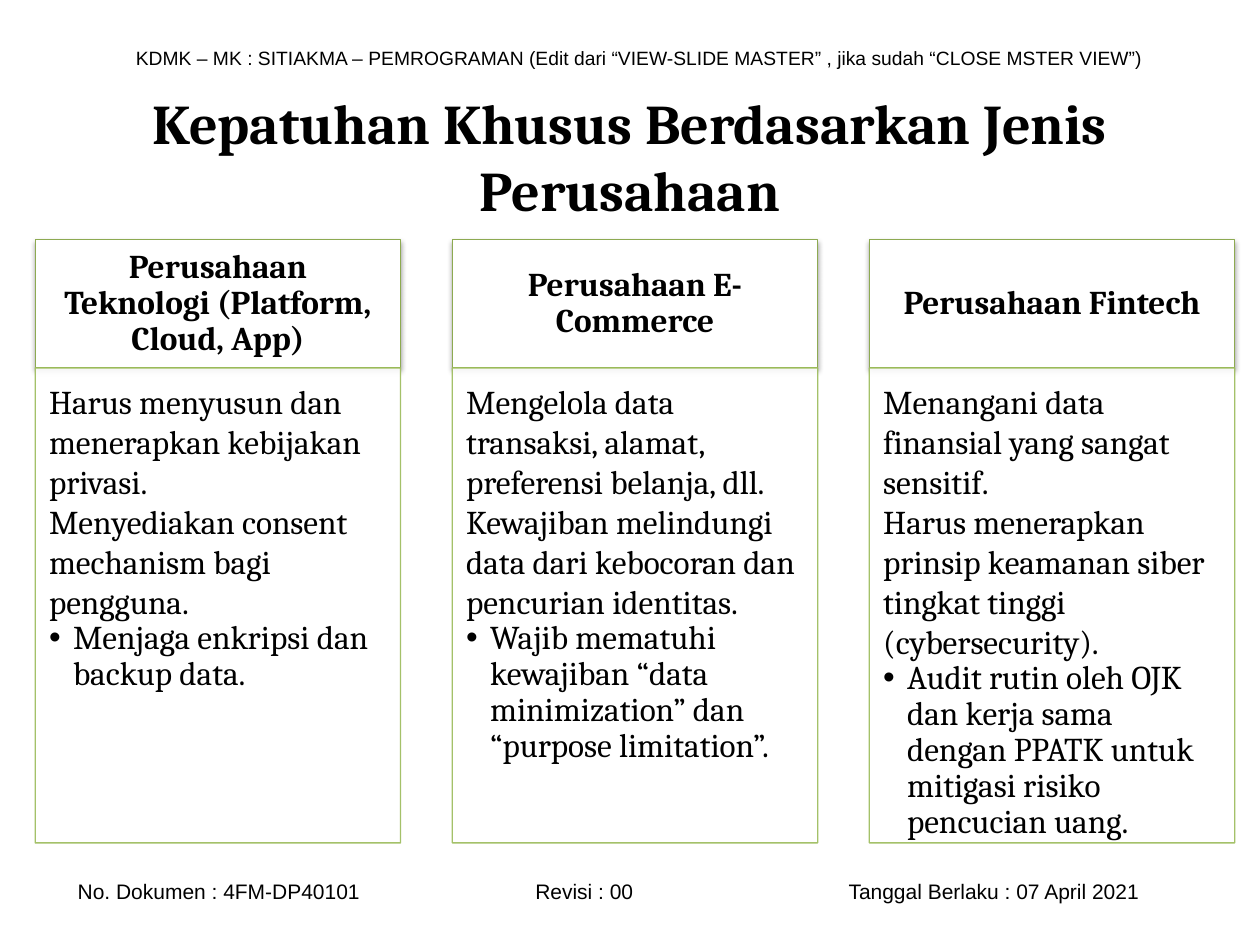
from lxml import etree
from pptx import Presentation
from pptx.dml.color import RGBColor
from pptx.enum.shapes import MSO_SHAPE
from pptx.enum.text import MSO_ANCHOR, PP_ALIGN
from pptx.oxml.ns import qn
from pptx.util import Pt

RECT = MSO_SHAPE.RECTANGLE
TOP, MIDDLE = MSO_ANCHOR.TOP, MSO_ANCHOR.MIDDLE
LEFT, CENTER = PP_ALIGN.LEFT, PP_ALIGN.CENTER

COLUMNS = [
    ("Perusahaan Teknologi (Platform, Cloud, App)",
     ["Harus menyusun dan menerapkan kebijakan privasi.",
      "Menyediakan consent mechanism bagi pengguna.",
      "Menjaga enkripsi dan backup data."]),
    ("Perusahaan E-Commerce",
     ["Mengelola data transaksi, alamat, preferensi belanja, dll.",
      "Kewajiban melindungi data dari kebocoran dan pencurian identitas.",
      "Wajib mematuhi kewajiban “data minimization” dan “purpose limitation”."]),
    ("Perusahaan Fintech",
     ["Menangani data finansial yang sangat sensitif.",
      "Harus menerapkan prinsip keamanan siber tingkat tinggi (cybersecurity).",
      "Audit rutin oleh OJK dan kerja sama dengan PPATK untuk mitigasi risiko "
      "pencucian uang."]),
]
COLUMN_LEFT, COLUMN_STEP, COLUMN_WIDTH = 20.16, 238.32, 208.8
HEADING_TOP, HEADING_HEIGHT, BODY_HEIGHT = 136.8, 73.44, 271.44


def rgb(hex_colour):
    return RGBColor.from_string(hex_colour)


def add_xml(parent, tag, **attributes):
    names = {name: str(value) for name, value in attributes.items()}
    return etree.SubElement(parent, qn(tag), names)


class ComplianceSlide:
    black, white = "000000", "FFFFFF"
    heading_line, body_line = "8DAA51", "9BBB59"
    sans, serif = "Arial", "Cambria"

    def __init__(self, slide):
        self.slide = slide

    def format_frame(self, frame, anchor, insets):
        sides = ("margin_left", "margin_top", "margin_right", "margin_bottom")
        settings = {"word_wrap": True, "vertical_anchor": anchor,
                    **{side: Pt(inset) for side, inset in zip(sides, insets)}}
        for name, value in settings.items():
            setattr(frame, name, value)

    def fill_paragraph(self, paragraph, text, font, size, bold=False,
                       align=LEFT, spacing=1.0):
        paragraph.text = text
        for name, value in {"alignment": align, "line_spacing": spacing}.items():
            setattr(paragraph, name, value)
        for name, value in {"name": font, "size": Pt(size), "bold": bold}.items():
            setattr(paragraph.font, name, value)
        paragraph.font.color.rgb = rgb(self.black)

    def text(self, box, text, font, size, bold=False, align=LEFT,
             inset_left=7.2, tabs=()):
        label = self.slide.shapes.add_textbox(*map(Pt, box))
        self.format_frame(label.text_frame, MIDDLE, (inset_left, 3.6, 7.2, 3.6))
        paragraph = label.text_frame.paragraphs[0]
        if tabs:
            tab_list = add_xml(paragraph._p.get_or_add_pPr(), "a:tabLst")
            for position in tabs:
                add_xml(tab_list, "a:tab", pos=Pt(position), algn="l")
        self.fill_paragraph(paragraph, text, font, size, bold, align)

    def panel(self, box, line):
        panel = self.slide.shapes.add_shape(RECT, *map(Pt, box))
        panel.shadow.inherit = False
        panel.fill.solid()
        panel.fill.fore_color.rgb = rgb(self.white)
        panel.line.color.rgb = rgb(line)
        panel.line.width = Pt(0.75)
        return panel

    def heading(self, box, text):
        panel = self.panel(box, self.heading_line)
        effects = panel._element.spPr.find(qn("a:effectLst"))
        shadow = add_xml(effects, "a:outerShdw", blurRad=Pt(3.1), dist=Pt(1.6),
                         dir=5400000, rotWithShape=0)
        shadow_colour = add_xml(shadow, "a:srgbClr", val=self.black)
        add_xml(shadow_colour, "a:alpha", val=38000)
        self.format_frame(panel.text_frame, MIDDLE, (10.8, 5.76, 10.8, 5.76))
        self.fill_paragraph(panel.text_frame.paragraphs[0], text, self.serif, 19,
                            bold=True, align=CENTER, spacing=0.9)

    def body(self, box, duties):
        """Set the duties as plain paragraphs, the last one with a bullet."""
        panel = self.panel(box, self.body_line)
        for colour in panel._element.spPr.iter(qn("a:srgbClr")):
            add_xml(colour, "a:alpha", val=90000)
        frame = panel.text_frame
        self.format_frame(frame, TOP, (7.92, 7.92, 10.8, 12.24))
        for index, duty in enumerate(duties):
            paragraph = frame.add_paragraph() if index else frame.paragraphs[0]
            spacing = 1.0
            if index == len(duties) - 1:
                spacing = 0.9
                properties = paragraph._p.get_or_add_pPr()
                properties.set("marL", str(Pt(13.68)))
                properties.set("indent", str(Pt(-13.68)))
                add_xml(properties, "a:buFont", typeface=self.sans)
                add_xml(properties, "a:buChar", char="•")
            self.fill_paragraph(paragraph, duty, self.serif, 19, spacing=spacing)


def main():
    deck = Presentation()
    deck.slide_width, deck.slide_height = Pt(720), Pt(540)
    page = ComplianceSlide(deck.slides.add_slide(deck.slide_layouts[6]))

    page.text((70.56, 22.32, 601.2, 20.88),
              "KDMK – MK : SITIAKMA – PEMROGRAMAN (Edit dari “VIEW-SLIDE MASTER” , "
              "jika sudah “CLOSE MSTER VIEW”)", page.sans, 11)
    page.text((14.4, 498.24, 680.4, 21.6),
              "No. Dokumen : 4FM-DP40101\tRevisi : 00\tTanggal Berlaku : 07 April 2021",
              page.sans, 12, inset_left=30, tabs=(261.5, 440.5))
    page.text((36, 43.92, 648, 90), "Kepatuhan Khusus Berdasarkan Jenis Perusahaan",
              page.serif, 32, bold=True, align=CENTER)

    for index, (company_type, duties) in enumerate(COLUMNS):
        left = COLUMN_LEFT + index * COLUMN_STEP
        page.heading((left, HEADING_TOP, COLUMN_WIDTH, HEADING_HEIGHT), company_type)
        page.body((left, HEADING_TOP + HEADING_HEIGHT, COLUMN_WIDTH, BODY_HEIGHT), duties)

    deck.save("out.pptx")


if __name__ == "__main__":
    main()
